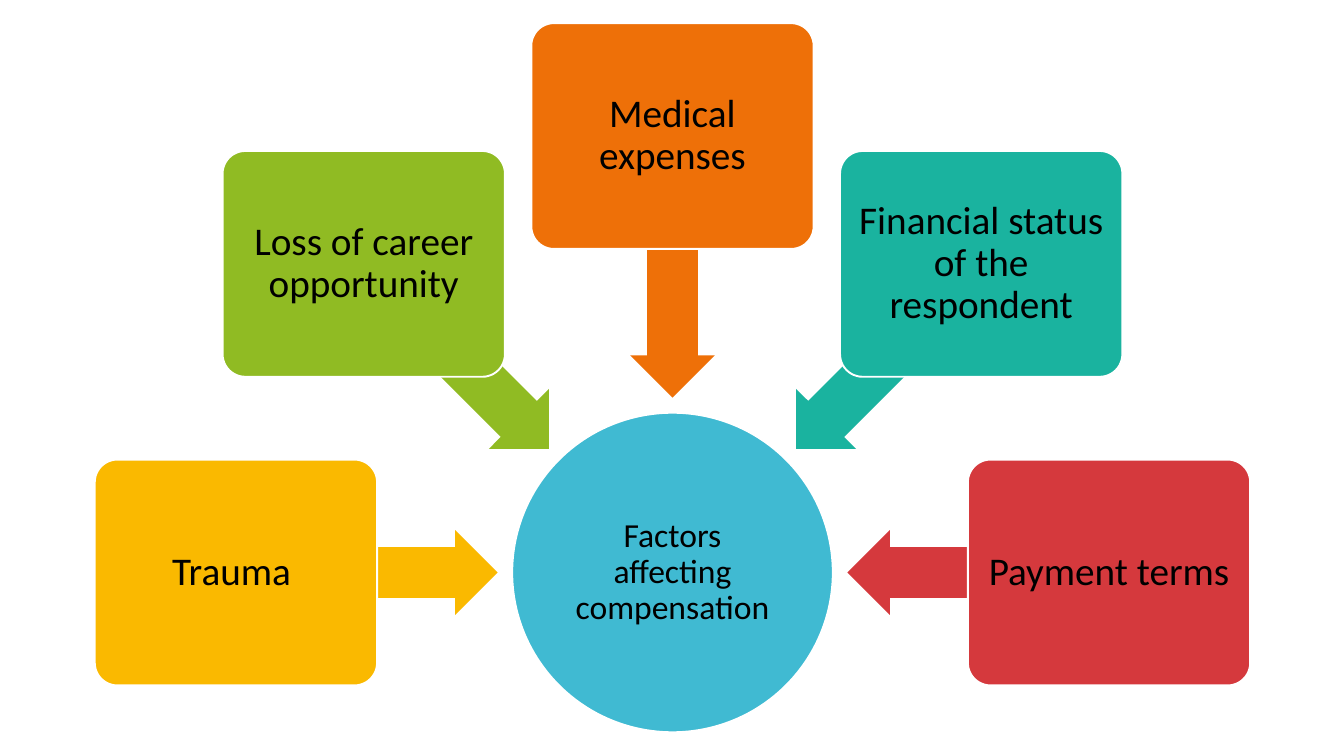
import math
from dataclasses import dataclass

import pptx
import pptx.dml.color
import pptx.enum.shapes
import pptx.enum.text
import pptx.util
from pptx.dml.color import RGBColor
from pptx.enum.shapes import MSO_SHAPE
from pptx.util import Inches

WHITE = RGBColor(0xFF, 0xFF, 0xFF)
BLACK = RGBColor(0x00, 0x00, 0x00)
BLUE = RGBColor(0x40, 0xBA, 0xD2)
YELLOW = RGBColor(0xFA, 0xB9, 0x00)
GREEN = RGBColor(0x90, 0xBB, 0x23)
ORANGE = RGBColor(0xEE, 0x70, 0x08)
TEAL = RGBColor(0x1A, 0xB3, 0x9F)
RED = RGBColor(0xD5, 0x39, 0x3D)

# Hub centre and the radii of the arcs around it, in inches
HUB_X, HUB_Y = 6.67, 5.68
BOX_RADIUS, ARROW_RADIUS = 4.33, 3.03
STEP = 45


@dataclass
class Factor:
    text: str
    color: RGBColor


@dataclass
class Form:
    kind: MSO_SHAPE
    width: float
    height: float
    adjustments: tuple[float, ...] = ()


HUB = Form(MSO_SHAPE.OVAL, 3.18, 3.17)
BOX = Form(MSO_SHAPE.ROUNDED_RECTANGLE, 2.8, 2.24, (0.1,))
ARROW = Form(MSO_SHAPE.LEFT_ARROW, 2.59, 0.84, (0.6, 0.5))

# Clockwise from the left of the hub
FACTORS = [
    Factor("Trauma ", YELLOW),
    Factor("Loss of career opportunity", GREEN),
    Factor("Medical expenses", ORANGE),
    Factor("Financial status of the respondent", TEAL),
    Factor("Payment terms", RED),
]


def add_form(s: pptx.slide.Slide, form: Form, color: RGBColor,
             radius: float = 0, angle: float = 0) -> pptx.shapes.autoshape.Shape:
    """Draw a form centred at a polar position around the hub."""
    x = HUB_X + radius * math.cos(math.radians(angle))
    y = HUB_Y + radius * math.sin(math.radians(angle))
    sp = s.shapes.add_shape(form.kind, Inches(x - form.width / 2),
                            Inches(y - form.height / 2),
                            Inches(form.width), Inches(form.height))
    for i, value in enumerate(form.adjustments):
        sp.adjustments[i] = value
    sp.shadow.inherit = False
    sp.fill.solid()
    sp.fill.fore_color.rgb = color
    sp.line.fill.background()
    return sp


def add_label(sp: pptx.shapes.autoshape.Shape, text: str, size: float,
              margin: float) -> None:
    """Outline a shape in white and write centred text in it."""
    sp.line.color.rgb = WHITE
    sp.line.width = pptx.util.Pt(1.35)
    tf = sp.text_frame
    frame_format = {"word_wrap": True,
                    "vertical_anchor": pptx.enum.text.MSO_ANCHOR.MIDDLE}
    for side in ("left", "right", "top", "bottom"):
        frame_format[f"margin_{side}"] = Inches(margin)
    for name, value in frame_format.items():
        setattr(tf, name, value)
    p = tf.paragraphs[0]
    p.alignment = pptx.enum.text.PP_ALIGN.CENTER
    p.line_spacing = 0.9
    r = p.add_run()
    r.text = text
    font_format = {"name": "Calibri", "size": pptx.util.Pt(size)}
    for name, value in font_format.items():
        setattr(r.font, name, value)
    r.font.color.rgb = BLACK


def main() -> None:
    prs = pptx.Presentation()
    prs.slide_width, prs.slide_height = Inches(13.33), Inches(7.5)
    s = prs.slides.add_slide(prs.slide_layouts[6])

    # Central hub
    add_label(add_form(s, HUB, BLUE), "Factors affecting compensation", 24, 0.02)

    # Factors on an arc, each with an arrow pointing at the hub
    for i, factor in enumerate(FACTORS):
        angle = 180 + STEP * i
        arrow = add_form(s, ARROW, factor.color, ARROW_RADIUS, angle)
        arrow.rotation = angle % 360
        box = add_form(s, BOX, factor.color, BOX_RADIUS, angle)
        add_label(box, factor.text, 28, 0.06)

    prs.save("out.pptx")


if __name__ == "__main__":
    main()
